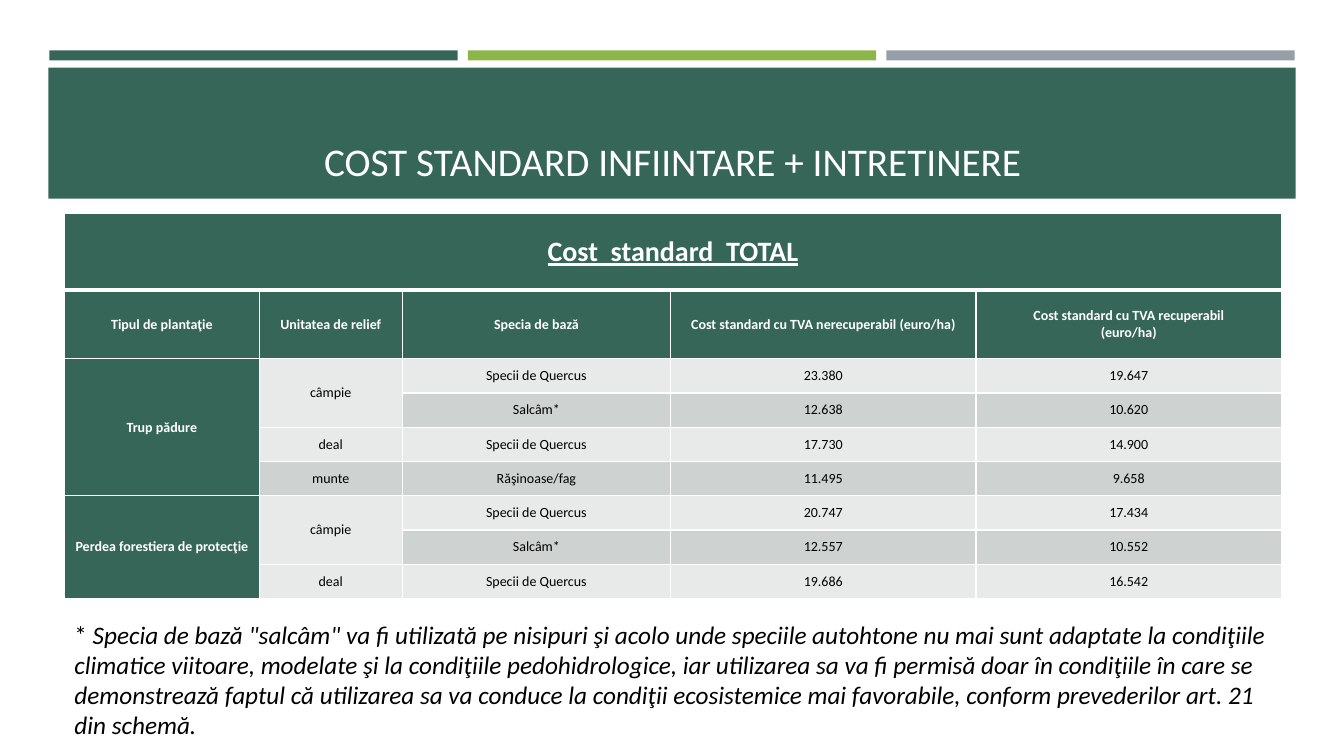
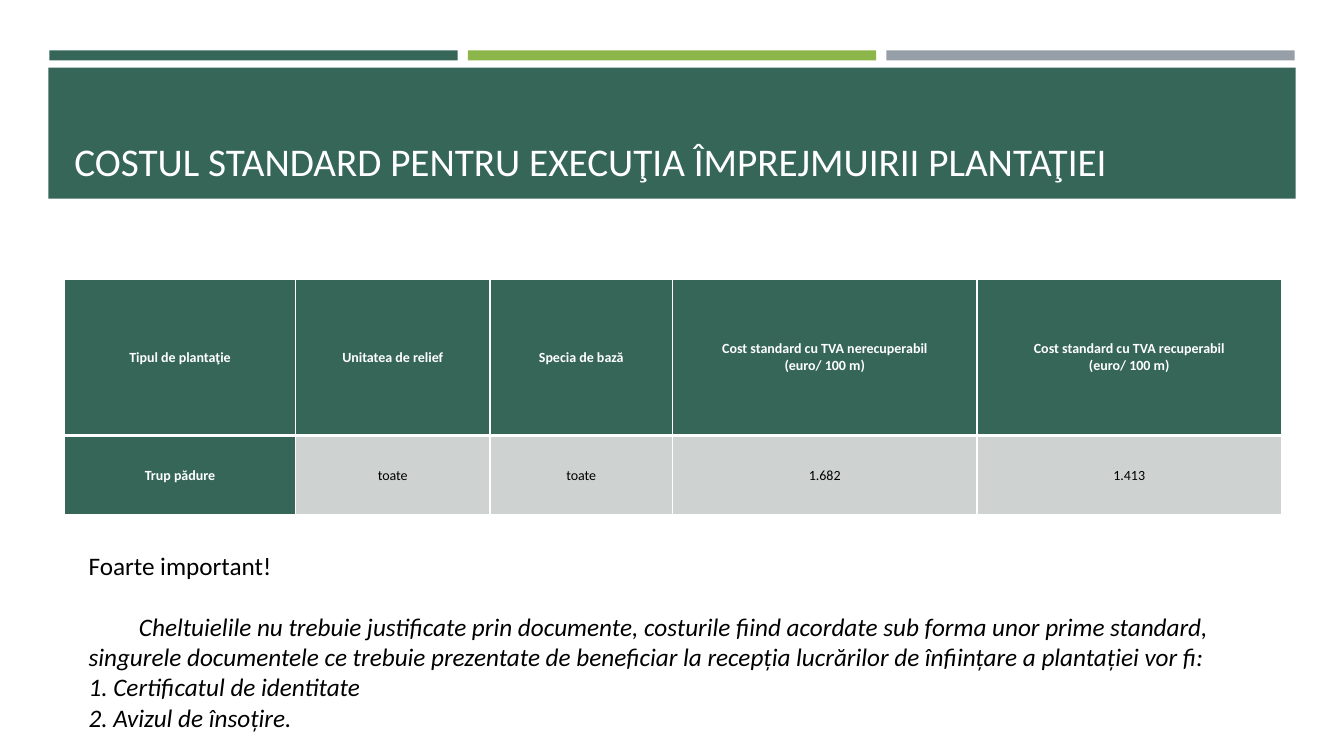
from lxml.etree import SubElement
from pptx import Presentation
from pptx.dml.color import RGBColor
from pptx.enum.shapes import MSO_SHAPE
from pptx.enum.text import MSO_ANCHOR, MSO_AUTO_SIZE, PP_ALIGN
from pptx.oxml.ns import qn
from pptx.util import Pt

EMU_PER_PX = 9144
FONT = "Calibri"
GREEN = RGBColor(0x36, 0x66, 0x58)
LIME = RGBColor(0x8C, 0xB6, 0x4A)
SLATE = RGBColor(0x96, 0x9F, 0xA7)
PALE = RGBColor(0xE8, 0xEA, 0xEA)
MIST = RGBColor(0xCE, 0xD3, 0xD1)
WHITE = RGBColor(0xFF, 0xFF, 0xFF)
BLACK = RGBColor(0x00, 0x00, 0x00)

TITLE = {"size": Pt(28)}
BANNER = {"size": Pt(20), "bold": True, "underline": True}
HEADING = {"size": Pt(10), "bold": True}
VALUE = {"size": Pt(10), "bold": False}
NOTE = {"size": Pt(18)}
NOTE_ITALIC = {"size": Pt(18), "italic": True}

TOTAL_COSTS = [
    ["Cost  standard  TOTAL", "", "", "", ""],
    ["Tipul de plantaţie", "Unitatea de relief", "Specia de bază",
     "Cost standard cu TVA nerecuperabil (euro/ha)",
     "Cost standard cu TVA recuperabil\n(euro/ha)"],
    ["Trup pădure", "câmpie", "Specii de Quercus", "23.380", "19.647"],
    ["", "", "Salcâm*", "12.638", "10.620"],
    ["", "deal", "Specii de Quercus", "17.730", "14.900"],
    ["", "munte", "Răşinoase/fag", "11.495", "9.658"],
    ["Perdea forestiera de protecţie", "câmpie", "Specii de Quercus", "20.747", "17.434"],
    ["", "", "Salcâm*", "12.557", "10.552"],
    ["", "deal", "Specii de Quercus", "19.686", "16.542"],
]
TOTAL_MERGES = [(0, 0, 0, 4), (2, 0, 5, 0), (2, 1, 3, 1), (6, 0, 8, 0), (6, 1, 7, 1)]

FENCE_COSTS = [
    ["Tipul de plantaţie", "Unitatea de relief", "Specia de bază",
     "Cost standard cu TVA nerecuperabil\n(euro/ 100 m)",
     "Cost standard cu TVA recuperabil\n(euro/ 100 m)"],
    ["Trup pădure", "toate", "toate", "1.682", "1.413"],
]

SPECIES_NOTE = (
    "Specia de bază \"salcâm\" va fi utilizată pe nisipuri şi acolo unde speciile autohtone "
    "nu mai sunt adaptate la condiţiile climatice viitoare, modelate şi la condiţiile "
    "pedohidrologice, iar utilizarea sa va fi permisă doar în condiţiile în care se "
    "demonstrează faptul că utilizarea sa va conduce la condiţii ecosistemice mai favorabile, "
    "conform prevederilor art. 21 din schemă."
)
EXPENSES_NOTE = (
    "Cheltuielile nu trebuie justificate prin documente, costurile fiind acordate sub forma "
    "unor prime standard, singurele documentele ce trebuie prezentate de beneficiar la "
    "recepția lucrărilor de înființare a plantației vor fi:"
)


def px(length):
    return length * EMU_PER_PX


class CostDeck:
    def __init__(self):
        self.deck = Presentation()
        self.deck.slide_width, self.deck.slide_height = px(1333), px(750)
        self.page = None

    def add_page(self, title, align=PP_ALIGN.LEFT):
        self.page = self.deck.slides.add_slide(self.deck.slide_layouts[6])
        for index, color in enumerate((GREEN, LIME, SLATE)):
            self.add_band(49 + 415 * index, 50, 405, 10, color)
        self.add_band(48, 67, 1237, 130, GREEN)
        frame = self.add_frame(64, 77, 1206, 111)
        frame.vertical_anchor = MSO_ANCHOR.BOTTOM
        para = frame.paragraphs[0]
        para.alignment = align
        self.add_span(para, title, TITLE, WHITE)

    def add_band(self, left, top, width, height, color):
        box = self.page.shapes.add_shape(
            MSO_SHAPE.RECTANGLE, px(left), px(top), px(width), px(height))
        box.shadow.inherit = False
        box.fill.solid()
        box.fill.fore_color.rgb = color
        box.line.fill.background()

    def add_frame(self, left, top, width, height):
        box = self.page.shapes.add_textbox(px(left), px(top), px(width), px(height))
        box.text_frame.word_wrap = True
        return box.text_frame

    def add_span(self, para, text, style, color):
        span = para.add_run()
        span.text = text
        for name, value in {"name": FONT, **style}.items():
            setattr(span.font, name, value)
        span.font.color.rgb = color

    def add_note(self, left, top, width, height, paragraphs):
        frame = self.add_frame(left, top, width, height)
        frame.auto_size = MSO_AUTO_SIZE.SHAPE_TO_FIT_TEXT
        for index, (spans, space_before, indent) in enumerate(paragraphs):
            para = frame.add_paragraph() if index else frame.paragraphs[0]
            if indent:
                para._p.get_or_add_pPr().set("indent", str(px(indent)))
            if space_before:
                para.space_before = Pt(space_before)
            for text, style in spans:
                self.add_span(para, text, style, BLACK)

    def add_cost_table(self, top, columns, heights, rows, heading_styles, insets, merges=()):
        frame = self.page.shapes.add_table(
            len(rows), len(columns), px(64), px(top), px(sum(columns)), px(sum(heights)))
        table = frame.table
        table.first_row = table.horz_banding = False
        for column, width in zip(table.columns, columns):
            column.width = px(width)
        for row, height in zip(table.rows, heights):
            row.height = px(height)
        for first_row, first_column, last_row, last_column in merges:
            table.cell(first_row, first_column).merge(table.cell(last_row, last_column))
        for row, texts in enumerate(rows):
            is_heading = row < len(heading_styles)
            row_style = heading_styles[row] if is_heading else VALUE
            for column, text in enumerate(texts):
                is_green = is_heading or column == 0
                style = row_style if is_heading or column else HEADING
                fill = GREEN if is_green else (MIST if row % 2 else PALE)
                self.fill_cell(table.cell(row, column), text, style,
                               WHITE if is_green else BLACK, fill, insets,
                               1 if row else 3)

    def fill_cell(self, cell, text, style, color, fill, insets, bottom_width):
        borders = {"a:lnL": 1, "a:lnR": 1, "a:lnT": 1, "a:lnB": bottom_width}
        properties = cell._tc.get_or_add_tcPr()
        for tag, width in borders.items():
            line = SubElement(properties, qn(tag), w=str(Pt(width)))
            paint = SubElement(line, qn("a:solidFill"))
            SubElement(paint, qn("a:srgbClr"), val=str(WHITE))
        cell.fill.solid()
        cell.fill.fore_color.rgb = fill
        cell.vertical_anchor = MSO_ANCHOR.MIDDLE
        cell.margin_left = cell.margin_right = px(insets[0])
        cell.margin_top = cell.margin_bottom = px(insets[1])
        if not text:
            return
        for index, line_text in enumerate(text.split("\n")):
            para = cell.text_frame.add_paragraph() if index else cell.text_frame.paragraphs[0]
            para.alignment = PP_ALIGN.CENTER
            self.add_span(para, line_text, style, color)


def main():
    costs = CostDeck()

    costs.add_page("COST STANDARD INFIINTARE + INTRETINERE", PP_ALIGN.CENTER)
    costs.add_cost_table(212, [193, 142, 266, 303, 303], [76, 68] + [34] * 7,
                         TOTAL_COSTS, [BANNER, HEADING], (7, 0), TOTAL_MERGES)
    costs.add_note(64, 609, 1222, 131, [
        ([("* ", NOTE), (SPECIES_NOTE, NOTE_ITALIC)], 0, 0),
    ])

    costs.add_page("COSTUL STANDARD PENTRU EXECUŢIA ÎMPREJMUIRII PLANTAŢIEI")
    costs.add_cost_table(277, [229, 193, 181, 302, 302], [155, 79],
                         FENCE_COSTS, [HEADING], (1, 1))
    costs.add_note(78, 541, 1196, 192, [
        ([("Foarte important!", NOTE)], 0, 0),
        ([(EXPENSES_NOTE, NOTE_ITALIC)], 22, 50),
        ([("1. Certificatul de identitate", NOTE_ITALIC)], 0, 0),
        ([("2. Avizul de însoțire.", NOTE_ITALIC)], 0, 0),
    ])

    costs.deck.save("out.pptx")


if __name__ == "__main__":
    main()
